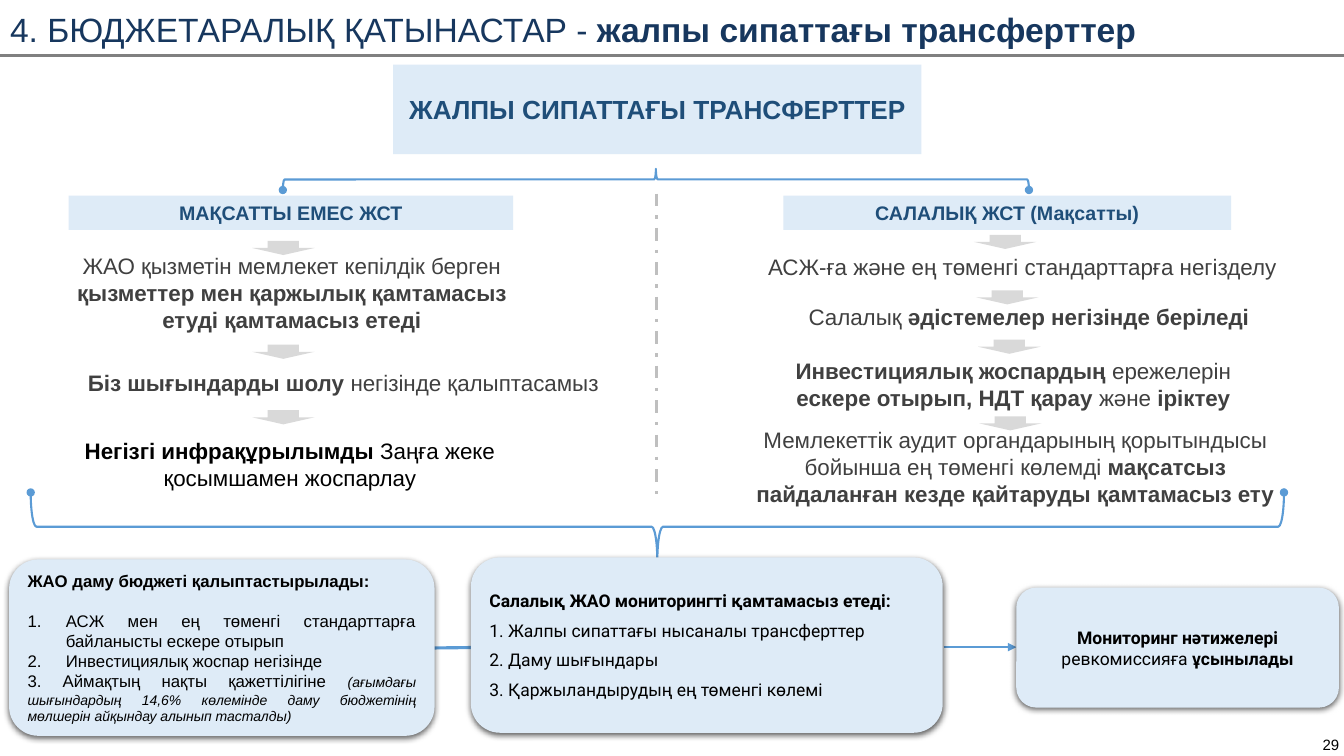
import dataclasses

import lxml.etree
import pptx
import pptx.dml.color
import pptx.enum.dml
import pptx.enum.shapes
import pptx.enum.text
import pptx.oxml.ns
import pptx.shapes.autoshape
import pptx.shapes.connector
import pptx.text.text
import pptx.util

Inches = pptx.util.Inches
Pt = pptx.util.Pt
qn = pptx.oxml.ns.qn
Align = pptx.enum.text.PP_ALIGN
Anchor = pptx.enum.text.MSO_ANCHOR
Preset = pptx.enum.shapes.MSO_SHAPE

PALE, BLUE, NAVY, INK = "DEEBF7", "5B9BD5", "1F4E79", "404040"
BLACK, ARROW_GREY = "000000", "D9D9D9"


@dataclasses.dataclass(frozen=True)
class Box:
    left: float
    top: float
    width: float
    height: float

    def lengths(self) -> tuple[int, int, int, int]:
        return Inches(self.left), Inches(self.top), Inches(self.width), Inches(self.height)


@dataclasses.dataclass(frozen=True)
class Banner:
    box: Box
    text: str
    size: float


@dataclasses.dataclass(frozen=True)
class Statement:
    box: Box
    text: str  # words between asterisks are bold
    color: str = INK


@dataclasses.dataclass(frozen=True)
class Link:
    start: tuple[float, float]
    end: tuple[float, float]
    color: str
    width: float
    dashed: bool = False
    arrow: bool = False


BANNERS = [
    Banner(Box(3.9, 0.64, 5.24, 0.89), "*ЖАЛПЫ СИПАТТАҒЫ ТРАНСФЕРТТЕР*", 18.7),
    Banner(Box(0.68, 1.94, 4.41, 0.34), "*МАҚСАТТЫ ЕМЕС ЖСТ*", 14),
    Banner(Box(7.77, 1.94, 4.44, 0.34), "*САЛАЛЫҚ ЖСТ (Мақсатты)*", 14),
]
STATEMENTS = [
    Statement(Box(0.74, 2.49, 4.31, 0.82), "ЖАО қызметін мемлекет кепілдік берген "
              "*қызметтер мен қаржылық қамтамасыз етуді қамтамасыз етеді*"),
    Statement(Box(0.67, 3.65, 5.47, 0.28), "*Біз шығындарды шолу *негізінде қалыптасамыз"),
    Statement(Box(0.56, 4.32, 4.63, 0.55),
              "*Негізгі инфрақұрылымды *Заңға жеке қосымшамен жоспарлау", BLACK),
    Statement(Box(7.49, 2.5, 5.3, 0.28), "АСЖ-ға және ең төменгі стандарттарға негізделу"),
    Statement(Box(7.62, 3, 5.17, 0.28), "Салалық *әдістемелер негізінде беріледі*"),
    Statement(Box(7.71, 3.53, 4.68, 0.55), "*Инвестициялық жоспардың *ережелерін "
              "*ескере отырып, НДТ қарау *және *іріктеу*"),
    Statement(Box(7.41, 4.21, 5.32, 0.82), "Мемлекеттік аудит органдарының қорытындысы бойынша "
              "ең төменгі көлемді *мақсатсыз пайдаланған кезде қайтаруды қамтамасыз ету*"),
]
STEP_ARROWS = [(2.5, 2.39), (2.5, 3.42), (2.5, 4.07),
               (9.66, 2.33), (9.68, 2.88), (9.7, 3.37), (9.71, 4.13)]
BRACES = [(Box(6.4, -1.92, 0.21, 7.4), 90), (Box(6.18, -0.99, 0.68, 12.43), 270)]
LINKS = [
    Link((0, 0.55), (13.33, 0.55), "808080", 2.25),
    Link((6.51, 1.92), (6.51, 4.93), "BFBFBF", 2.25, dashed=True),
    Link((0.71, 6.47), (5.04, 6.42), BLUE, 2.25),
    Link((9.36, 6.42), (10.08, 6.42), BLUE, 1.5, arrow=True),
]

prs = pptx.Presentation()
prs.slide_width, prs.slide_height = Inches(13.33), Inches(7.5)
slide = prs.slides.add_slide(prs.slide_layouts.get_by_name("Title Only"))


def rgb(value: str) -> pptx.dml.color.RGBColor:
    return pptx.dml.color.RGBColor.from_string(value)


def write(paragraph, text: str, *, size: float, color: str = BLACK, font: str = "Arial",
          italic: bool = False, align: Align = Align.CENTER, after: float = 0) -> None:
    """Append text to a paragraph; parts between asterisks are bold."""
    paragraph.alignment = align
    paragraph.space_before, paragraph.space_after = Pt(0), Pt(after)
    for index, part in enumerate(text.split("*")):
        if part:
            run = paragraph.add_run()
            run.text = part
            run.font.size, run.font.name = Pt(size), font
            run.font.bold, run.font.italic = index % 2 == 1, italic
            run.font.color.rgb = rgb(color)


def set_frame(frame: pptx.text.text.TextFrame, margins: tuple[float, float]) -> None:
    side, top = margins
    frame.word_wrap = True
    frame.auto_size = pptx.enum.text.MSO_AUTO_SIZE.NONE
    frame.vertical_anchor = Anchor.MIDDLE
    frame.margin_left = frame.margin_right = Inches(side)
    frame.margin_top, frame.margin_bottom = Inches(top), Inches(0)


def add_text(box: Box, text: str, margins: tuple[float, float], size: float, color: str) -> None:
    frame = slide.shapes.add_textbox(*box.lengths()).text_frame
    set_frame(frame, margins)
    write(frame.paragraphs[0], text, size=size, color=color)


def add_panel(preset: Preset, box: Box, fill: str) -> pptx.shapes.autoshape.Shape:
    panel = slide.shapes.add_shape(preset, *box.lengths())
    panel.shadow.inherit = False
    panel.fill.solid()
    panel.fill.fore_color.rgb = rgb(fill)
    panel.line.fill.background()
    panel.text_frame.word_wrap = True
    panel.text_frame.vertical_anchor = Anchor.MIDDLE
    return panel


def add_card(box: Box) -> pptx.text.text.TextFrame:
    card = add_panel(Preset.ROUNDED_RECTANGLE, box, PALE)
    effects = card.element.spPr.find(qn("a:effectLst"))
    shadow = lxml.etree.SubElement(effects, qn("a:outerShdw"), blurRad=str(Pt(4.5)),
                                   dist=str(Pt(1.5)), dir="5400000", rotWithShape="0")
    shade = lxml.etree.SubElement(shadow, qn("a:srgbClr"), val=BLACK)
    lxml.etree.SubElement(shade, qn("a:alpha"), val="63000")
    return card.text_frame


def add_ends(shape, **ends: str) -> None:
    outline = shape.element.spPr.find(qn("a:ln"))
    for end, kind in ends.items():
        lxml.etree.SubElement(outline, qn(f"a:{end}"), type=kind)


def add_brace(box: Box, rotation: float) -> None:
    brace = slide.shapes.add_shape(Preset.LEFT_BRACE, *box.lengths())
    brace.rotation = rotation
    brace.shadow.inherit = False
    brace.fill.background()
    brace.line.color.rgb, brace.line.width = rgb(BLUE), Pt(1.5)
    add_ends(brace, headEnd="oval", tailEnd="oval")


def add_link(link: Link) -> None:
    connector = slide.shapes.add_connector(pptx.enum.shapes.MSO_CONNECTOR.STRAIGHT,
                                           *map(Inches, link.start + link.end))
    connector.line.color.rgb, connector.line.width = rgb(link.color), Pt(link.width)
    if link.dashed:
        connector.line.dash_style = pptx.enum.dml.MSO_LINE.DASH_DOT
    if link.arrow:
        add_ends(connector, tailEnd="triangle")
    lxml.etree.SubElement(connector.element.spPr, qn("a:effectLst"))


def number_item(paragraph) -> None:
    properties = paragraph._p.get_or_add_pPr()
    properties.set("marL", str(Inches(0.38)))
    properties.set("indent", str(Inches(-0.38)))
    lxml.etree.SubElement(properties, qn("a:buFont"), typeface="+mj-lt")
    lxml.etree.SubElement(properties, qn("a:buAutoNum"), type="arabicPeriod")


# Title and page number
heading = slide.shapes.title
heading.left, heading.top, heading.width, heading.height = Box(0, 0.13, 12.38, 0.32).lengths()
set_frame(heading.text_frame, (0.1, 0))
write(heading.text_frame.paragraphs[0],
      "4. БЮДЖЕТАРАЛЫҚ ҚАТЫНАСТАР - *жалпы сипаттағы трансферттер*",
      size=24, color="17375E", align=Align.LEFT)
add_text(Box(12.93, 7.27, 0.54, 0.24), "29", (0.13, 0), 10.7, BLACK)

# Two branches of transfers
for banner in BANNERS:
    panel = add_panel(Preset.RECTANGLE, banner.box, PALE)
    write(panel.text_frame.paragraphs[0], banner.text, size=banner.size, color=NAVY)
for left, top in STEP_ARROWS:
    add_panel(Preset.DOWN_ARROW, Box(left, top, 0.62, 0.14), ARROW_GREY)
for statement in STATEMENTS:
    add_text(statement.box, statement.text, (0, 0.01), 16, statement.color)
for brace_box, turn in BRACES:
    add_brace(brace_box, turn)
for link in LINKS:
    add_link(link)

# Development budget card
budget = add_card(Box(0.09, 5.55, 4.22, 1.75))
write(budget.paragraphs[0], "*ЖАО даму бюджеті қалыптастырылады:*", size=12,
      align=Align.JUSTIFY, after=14)
for item in ("АСЖ мен ең төменгі стандарттарға байланысты ескере отырып",
             "Инвестициялық жоспар негізінде"):
    basis = budget.add_paragraph()
    write(basis, item, size=12, align=Align.JUSTIFY)
    number_item(basis)
need = budget.add_paragraph()
write(need, "3. Аймақтың нақты қажеттілігіне ", size=12, align=Align.JUSTIFY)
write(need, "(ағымдағы шығындардың 14,6% көлемінде даму бюджетінің мөлшерін айқындау "
      "алынып тасталды)", size=10, italic=True, align=Align.JUSTIFY)

# Monitoring cards
monitoring = add_card(Box(4.67, 5.53, 4.68, 1.74))
write(monitoring.paragraphs[0], "*Салалық ЖАО мониторингті қамтамасыз етеді:*", size=12.5,
      font="Roboto", align=Align.JUSTIFY, after=6)
for item in ("1. Жалпы сипаттағы нысаналы трансферттер", "2. Даму шығындары",
             "3. Қаржыландырудың ең төменгі көлемі"):
    write(monitoring.add_paragraph(), item, size=12.5, font="Roboto",
          align=Align.JUSTIFY, after=6)
results = add_card(Box(10.08, 5.83, 3.2, 1.19))
write(results.paragraphs[0], "*Мониторинг нәтижелері* ревкомиссияға *ұсынылады*",
      size=12.5, font="Roboto")

prs.save("out.pptx")
